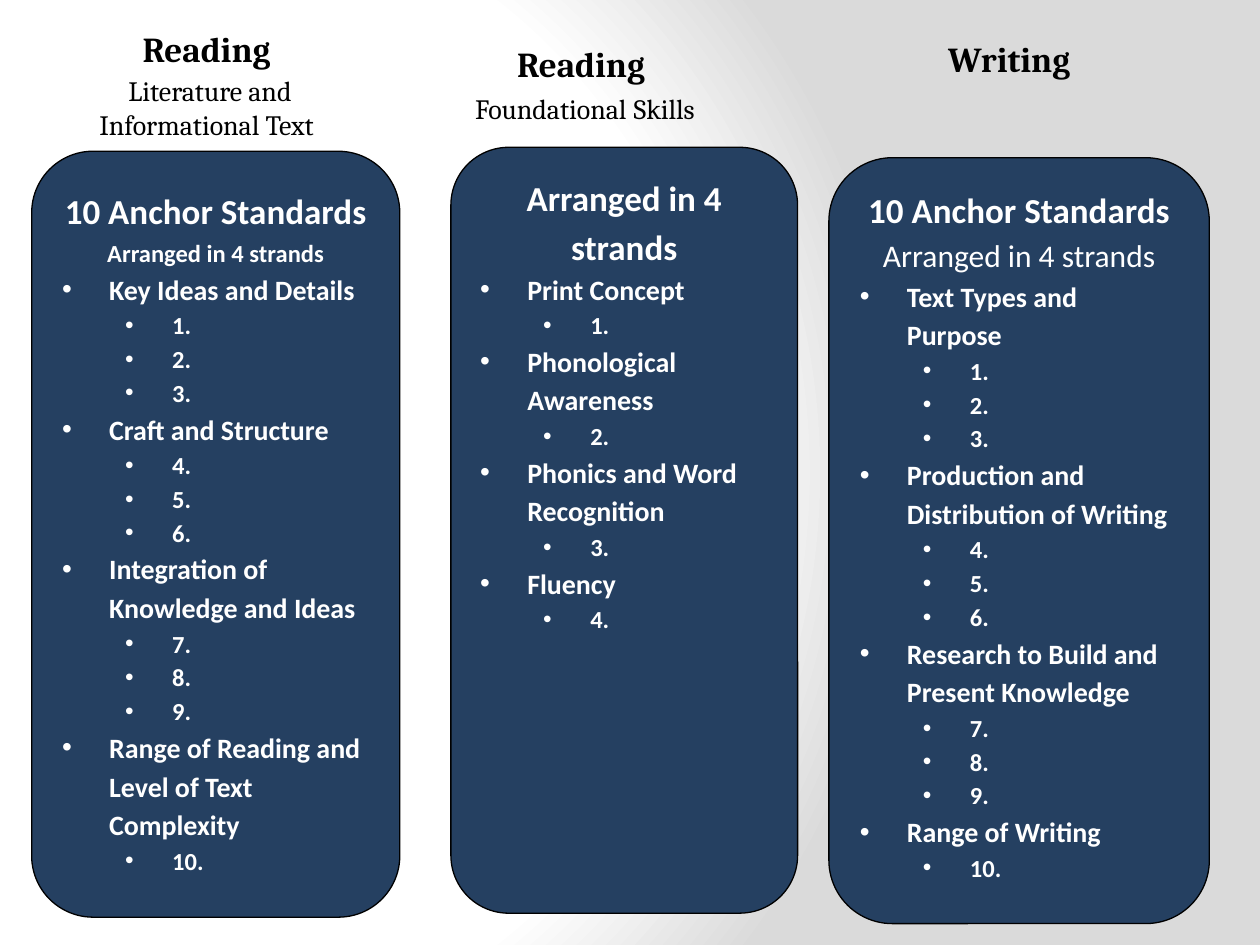
import pptx
import pptx.util
from pptx.dml.color import RGBColor
from pptx.enum.shapes import MSO_SHAPE
from pptx.enum.text import MSO_ANCHOR, MSO_AUTO_SIZE, PP_ALIGN
from pptx.oxml import parse_xml
from pptx.oxml.ns import nsdecls
from pptx.util import Cm

COLORS = {"panel": "254061", "outline": "000000", "heading": "000000",
          "panel_text": "FFFFFF", "light": "FFFFFF", "shade": "DADADA"}
BULLET_INDENT = 0.95
LEVEL_STEP = 1.27

# Boxes are left, top, width, height in cm; runs are (text, size, bold)
COLUMNS = [
    {
        "heading_box": (0.71, 0.43, 6.91, 2.57),
        "heading": [[("Reading", 20, True)],
                    [(" ", 18, False),
                     ("Literature and Informational Text", 16, False)]],
        "panel_box": (0.64, 3.05, 7.42, 15.44),
        "intro": [("10 Anchor Standards", 20, True), (" ", 24, True),
                  ("Arranged in 4 strands", 14, True)],
        "strands": [("Key Ideas and Details", 3),
                    ("Craft and Structure", 3),
                    ("Integration of Knowledge and Ideas", 3),
                    ("Range of Reading and Level of Text Complexity", 1)],
    },
    {
        "heading_box": (8.26, 0.74, 6.91, 1.96),
        "heading": [[("Reading", 20, True)],
                    [(" ", 20, True), ("Foundational", 16, False),
                     (" ", 18, False), ("Skills", 16, False)]],
        "panel_box": (9.09, 2.97, 6.99, 15.44),
        "intro": [("Arranged in 4 strands", 20, True)],
        "strands": [("Print Concept", 1),
                    ("Phonological Awareness", 1),
                    ("Phonics and Word Recognition", 1),
                    ("Fluency", 1)],
    },
    {
        "heading_box": (16.51, 0.64, 7.67, 1.12),
        "heading": [[("Writing", 20, True)]],
        "panel_box": (16.71, 3.18, 7.67, 15.44),
        "intro": [("10 Anchor Standards ", 20, True),
                  ("Arranged in 4 strands", 18, False)],
        "strands": [("Text Types and Purpose", 3),
                    ("Production and Distribution of Writing", 3),
                    ("Research to Build and Present Knowledge", 3),
                    ("Range of Writing", 1)],
    },
]


def add_runs(paragraph, runs, font_name, color):
    for text, size, bold in runs:
        run = paragraph.add_run()
        run.text = text
        run.font.name = font_name
        run.font.size = pptx.util.Pt(size)
        run.font.bold = bold
        run.font.color.rgb = RGBColor.from_string(COLORS[color])


def set_bullet(paragraph, level):
    paragraph.level = level
    properties = paragraph._p.get_or_add_pPr()
    properties.set("marL", str(Cm(BULLET_INDENT + level * LEVEL_STEP)))
    properties.set("indent", str(-Cm(BULLET_INDENT)))
    for bullet in ('<a:buFont %s typeface="Arial"/>', '<a:buChar %s char="•"/>'):
        properties.append(parse_xml(bullet % nsdecls("a")))


def paint_background(slide):
    background = slide.background.fill
    background.gradient()
    stops = "".join(
        f'<a:gs pos="{position * 1000}"><a:srgbClr val="{COLORS[name]}"/></a:gs>'
        for position, name in ((0, "light"), (75, "light"), (100, "shade")))
    gradient = parse_xml(
        f'<a:gradFill {nsdecls("a")} rotWithShape="1"><a:gsLst>{stops}</a:gsLst>'
        '<a:path path="circle"><a:fillToRect l="20000" t="50000" '
        'r="100000" b="50000"/></a:path></a:gradFill>')
    properties = slide.background._cSld.bg.bgPr
    properties.replace(properties.eg_fillProperties, gradient)


def fill_heading(heading, box, lines):
    heading.left, heading.top, heading.width, heading.height = map(Cm, box)
    frame = heading.text_frame
    frame.word_wrap = True
    frame.auto_size = MSO_AUTO_SIZE.SHAPE_TO_FIT_TEXT
    frame.vertical_anchor = MSO_ANCHOR.TOP
    for index, runs in enumerate(lines):
        line = frame.add_paragraph() if index else frame.paragraphs[0]
        line.alignment = PP_ALIGN.CENTER
        add_runs(line, runs, "Cambria", "heading")


def add_panel(slide, box, intro, strands):
    panel = slide.shapes.add_shape(MSO_SHAPE.ROUNDED_RECTANGLE, *map(Cm, box))
    panel.shadow.inherit = False
    panel.fill.solid()
    panel.fill.fore_color.rgb = RGBColor.from_string(COLORS["panel"])
    panel.line.color.rgb = RGBColor.from_string(COLORS["outline"])
    panel.line.width = pptx.util.Pt(0.75)
    frame = panel.text_frame
    frame.word_wrap = True
    frame.vertical_anchor = MSO_ANCHOR.TOP

    opening = frame.paragraphs[0]
    opening.alignment = PP_ALIGN.CENTER
    opening.line_spacing = 1.15
    add_runs(opening, intro, "Calibri", "panel_text")

    # Strands, with standards numbered on through the panel
    entries = []
    number = 0
    for strand, count in strands:
        entries.append((strand, 0, 16))
        for _ in range(count):
            number += 1
            entries.append((f"{number}.", 1, 14))
    for text, level, size in entries:
        entry = frame.add_paragraph()
        entry.alignment = PP_ALIGN.LEFT
        entry.line_spacing = 1.15
        set_bullet(entry, level)
        add_runs(entry, [(text, size, True)], "Calibri", "panel_text")


def main():
    deck = pptx.Presentation()
    deck.slide_width, deck.slide_height = Cm(25.4), Cm(19.05)
    slide = deck.slides.add_slide(deck.slide_layouts.get_by_name("Title Only"))
    paint_background(slide)

    # The first column's heading is the slide title
    for index, column in enumerate(COLUMNS):
        add_panel(slide, column["panel_box"], column["intro"], column["strands"])
        heading_box = column["heading_box"]
        heading = (slide.shapes.add_textbox(*map(Cm, heading_box)) if index
                   else slide.shapes.title)
        fill_heading(heading, heading_box, column["heading"])

    deck.save("out.pptx")


if __name__ == "__main__":
    main()
